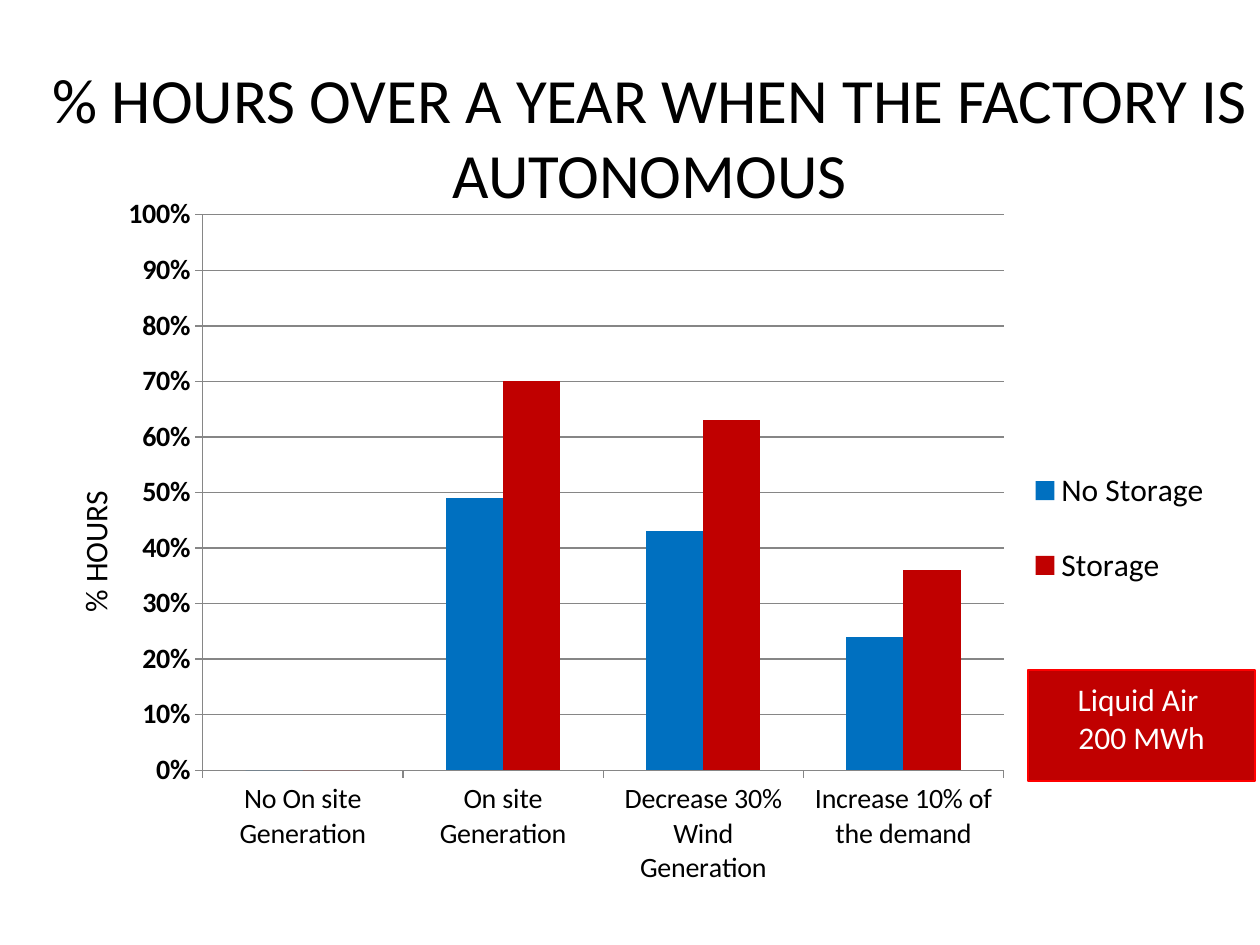
from lxml import etree
from pptx import Presentation
from pptx.chart.data import CategoryChartData
from pptx.dml.color import RGBColor
from pptx.enum.chart import XL_CHART_TYPE, XL_LEGEND_POSITION, XL_TICK_MARK
from pptx.enum.shapes import MSO_SHAPE
from pptx.enum.text import MSO_ANCHOR, PP_ALIGN
from pptx.oxml.ns import qn
from pptx.util import Cm, Pt

COLUMNS = XL_CHART_TYPE.COLUMN_CLUSTERED
LEGEND_RIGHT = XL_LEGEND_POSITION.RIGHT
TICK_OUT = XL_TICK_MARK.OUTSIDE
RECTANGLE = MSO_SHAPE.RECTANGLE
TOP = MSO_ANCHOR.TOP
CENTER = PP_ALIGN.CENTER

FONT = "Calibri"
COLORS = {
    "text": "000000",
    "light": "FFFFFF",
    "no_storage": "0070C0",
    "storage": "C00000",
    "outline": "FF0000",
    "grid": "868686",
}


def rgb(name):
    return RGBColor.from_string(COLORS[name])


def format_font(font, size, color="text", bold=False):
    font.name = FONT
    font.size = Pt(size)
    font.bold = bold
    font.color.rgb = rgb(color)


def write_text(frame, text, size=18, color="text", bold=False, align=CENTER):
    """Fill a text frame, one paragraph for each line of text."""
    frame.text = text
    for paragraph in frame.paragraphs:
        paragraph.alignment = align
        for run in paragraph.runs:
            format_font(run.font, size, color, bold)


def place_in_chart(element, index, inner=False, **fractions):
    """Give a chart part a manual layout, in fractions of the chart area."""
    for old in element.findall(qn("c:layout")):
        element.remove(old)
    layout = etree.Element(qn("c:layout"))
    manual = etree.SubElement(layout, qn("c:manualLayout"))
    settings = {"layoutTarget": "inner"} if inner else {}
    settings.update(xMode="edge", yMode="edge", **fractions)
    for tag, value in settings.items():
        etree.SubElement(manual, qn(f"c:{tag}")).set("val", str(value))
    element.insert(index, layout)


class SlideBuilder:
    def __init__(self, slide):
        self.slide = slide

    def title(self, text, left, top, width, height):
        title = self.slide.shapes.title
        title.left, title.top = Cm(left), Cm(top)
        title.width, title.height = Cm(width), Cm(height)
        title.text_frame.word_wrap = True
        title.text_frame.vertical_anchor = TOP
        write_text(title.text_frame, text, size=36)

    def text(self, text, left, top, width, height, **text_format):
        label = self.slide.shapes.add_textbox(Cm(left), Cm(top), Cm(width), Cm(height))
        label.text_frame.word_wrap = True
        write_text(label.text_frame, text, **text_format)

    def box(self, left, top, width, height, fill, line):
        box = self.slide.shapes.add_shape(
            RECTANGLE, Cm(left), Cm(top), Cm(width), Cm(height))
        box.shadow.inherit = False
        box.fill.solid()
        box.fill.fore_color.rgb = rgb(fill)
        box.line.color.rgb = rgb(line)
        box.line.width = Pt(1.25)

    def column_chart(self, categories, series, axis_title, left, top, width, height):
        """Draw clustered columns; series maps a name to (colour, values)."""
        data = CategoryChartData(number_format="0%")
        data.categories = categories
        for name, (_, values) in series.items():
            data.add_series(name, values)
        chart = self.slide.shapes.add_chart(
            COLUMNS, Cm(left), Cm(top), Cm(width), Cm(height), data).chart
        chart.has_title = False
        format_font(chart.font, 10)

        plot = chart.plots[0]
        plot.vary_by_categories = False
        plot.gap_width = 150
        plot.overlap = 0
        for columns, (color, _) in zip(plot.series, series.values()):
            columns.format.fill.solid()
            columns.format.fill.fore_color.rgb = rgb(color)

        hours = chart.value_axis
        hours.minimum_scale, hours.maximum_scale, hours.major_unit = 0, 1, 0.1
        hours.tick_labels.number_format = "0%"
        hours.tick_labels.number_format_is_linked = False
        hours.has_major_gridlines = True
        hours.axis_title.text_frame.text = axis_title
        write_text(hours.axis_title.text_frame, axis_title)
        for axis, bold in ((chart.category_axis, False), (hours, True)):
            axis.major_tick_mark = TICK_OUT
            format_font(axis.tick_labels.font, 16, bold=bold)
        for line in (hours.major_gridlines.format.line, hours.format.line,
                     chart.category_axis.format.line):
            line.color.rgb = rgb("grid")
            line.width = Pt(0.75)

        chart.has_legend = True
        chart.legend.position = LEGEND_RIGHT
        chart.legend.include_in_layout = False
        format_font(chart.legend.font, 18)

        plot_area = chart._chartSpace.chart.plotArea
        place_in_chart(plot_area, 0, inner=True, x=0.143, y=0.043, w=0.67, h=0.775)
        place_in_chart(chart.legend._element, 1, x=0.83, y=0.35, w=0.16, h=0.26)
        place_in_chart(hours.axis_title._element, 1, x=0.03, y=0.41)


def main():
    deck = Presentation()
    deck.slide_width, deck.slide_height = Cm(25.4), Cm(19.05)
    title_only = deck.slide_layouts[5]
    builder = SlideBuilder(deck.slides.add_slide(title_only))

    builder.title("% HOURS OVER A YEAR WHEN THE FACTORY IS AUTONOMOUS",
                  0.2, 1.09, 25.8, 1.8)
    builder.column_chart(
        ["No On site Generation", "On site Generation",
         "Decrease 30% Wind Generation", "Increase 10% of the demand"],
        {"No Storage": ("no_storage", (0, 0.49, 0.43, 0.24)),
         "Storage": ("storage", (0, 0.7, 0.63, 0.36))},
        "% HOURS ", 0.64, 3.71, 24.1, 14.45)
    builder.box(20.73, 13.51, 4.57, 2.24, fill="storage", line="outline")
    builder.text("Liquid Air \n200 MWh", 20.68, 13.59, 4.67, 2.57, color="light")

    deck.save("out.pptx")


if __name__ == "__main__":
    main()
